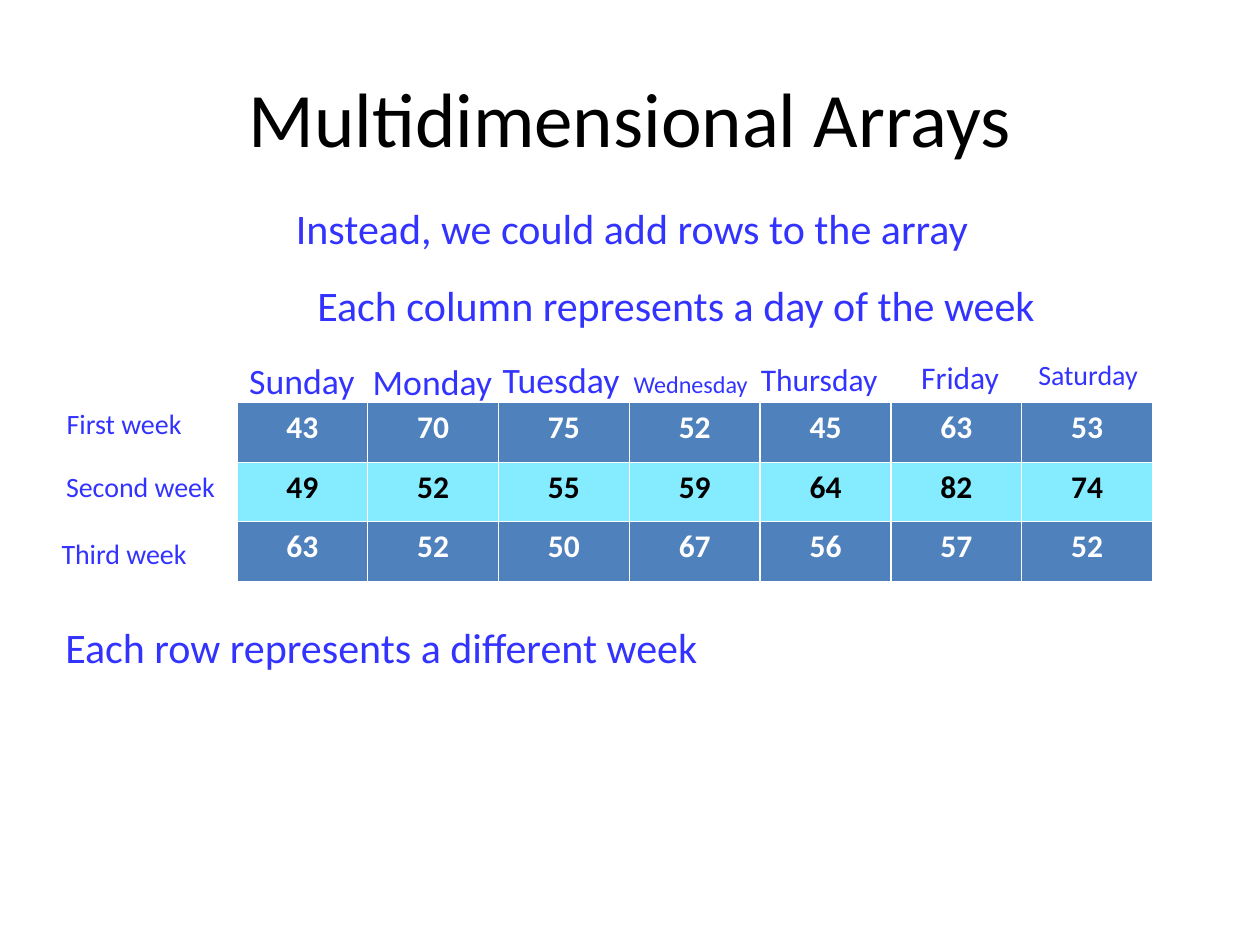
from dataclasses import dataclass

from pptx import Presentation
from pptx.dml.color import RGBColor
from pptx.enum.text import MSO_ANCHOR, PP_ALIGN
from pptx.slide import Slide
from pptx.text.text import TextFrame
from pptx.util import Inches, Pt

FONT = "Calibri"
BLACK = "000000"
WHITE = "FFFFFF"
LABEL_BLUE = "3333FF"
HEADER_BLUE = "4F81BD"
LIGHT_CYAN = "85EBFF"
TABLE_LEFT = 1.88
TABLE_WIDTH = 7.27
ROW_HEIGHT = 0.48


@dataclass
class Label:
    text: str
    left: float
    top: float
    width: float
    height: float = 0.41
    size: float = 16
    align: PP_ALIGN = PP_ALIGN.LEFT


@dataclass
class WeekRow:
    temperatures: list[int]
    fill: str
    color: str


FIRST_WEEK = WeekRow([43, 70, 75, 52, 45, 63, 53], HEADER_BLUE, WHITE)
SECOND_WEEK = WeekRow([49, 52, 55, 59, 64, 82, 74], LIGHT_CYAN, BLACK)
THIRD_WEEK = WeekRow([63, 52, 50, 67, 56, 57, 52], HEADER_BLUE, WHITE)

LABELS = [
    Label("Instead, we could add rows to the array", 2.25, 1.56, 6.4, 0.69, 24),
    Label("Each column represents a day of the week", 2.42, 2.17, 6.06, 0.56, 24),
    Label("Sunday", 1.88, 2.8, 1.1, size=20.4),
    Label("Monday", 2.86, 2.81, 1.17, size=20.4),
    Label("Tuesday", 3.89, 2.79, 1.17, size=20.4),
    Label("Wednesday", 4.93, 2.88, 1.17, size=13.8),
    Label("Thursday", 5.94, 2.81, 1.29, size=18),
    Label("Friday", 7.12, 2.79, 1, size=18, align=PP_ALIGN.CENTER),
    Label("Saturday", 8.11, 2.79, 1.05, align=PP_ALIGN.CENTER),
    Label("First week", 0.41, 3.18, 1.15, align=PP_ALIGN.CENTER),
    Label("Second week", 0.41, 3.68, 1.41, align=PP_ALIGN.CENTER),
    Label("Third week", 0.29, 4.21, 1.39, align=PP_ALIGN.CENTER),
    Label("Each row represents a different week", 0.42, 4.88, 6.06, 0.56, 24),
]


def rgb(value: str) -> RGBColor:
    return RGBColor.from_string(value)


def write_text(text_frame: TextFrame, text: str, size: float, color: str,
               align: PP_ALIGN, bold: bool = False) -> None:
    text_frame.text = text
    paragraph = text_frame.paragraphs[0]
    paragraph.alignment = align
    font = paragraph.runs[0].font
    font.name = FONT
    font.size = Pt(size)
    font.bold = bold
    font.color.rgb = rgb(color)


def add_title(slide: Slide, text: str) -> None:
    title = slide.shapes.title
    title.left, title.top = Inches(0.5), Inches(0.3)
    title.width, title.height = Inches(9), Inches(1.25)
    title.text_frame.vertical_anchor = MSO_ANCHOR.MIDDLE
    write_text(title.text_frame, text, 44, BLACK, PP_ALIGN.CENTER)


def add_label(slide: Slide, label: Label) -> None:
    shape = slide.shapes.add_textbox(Inches(label.left), Inches(label.top),
                                     Inches(label.width), Inches(label.height))
    shape.text_frame.word_wrap = True
    write_text(shape.text_frame, label.text, label.size, LABEL_BLUE, label.align)


def add_week_table(slide: Slide, top: float, weeks: list[WeekRow]) -> None:
    table = slide.shapes.add_table(
        len(weeks), len(weeks[0].temperatures), Inches(TABLE_LEFT), Inches(top),
        Inches(TABLE_WIDTH), Inches(ROW_HEIGHT * len(weeks))).table
    table.horz_banding = False
    for row, week in zip(table.rows, weeks):
        for cell, temperature in zip(row.cells, week.temperatures):
            cell.fill.solid()
            cell.fill.fore_color.rgb = rgb(week.fill)
            write_text(cell.text_frame, str(temperature), 18, week.color,
                       PP_ALIGN.CENTER, bold=True)


def main() -> None:
    presentation = Presentation()
    presentation.slide_width = Inches(10)
    presentation.slide_height = Inches(7.5)
    slide = presentation.slides.add_slide(presentation.slide_layouts[5])
    add_title(slide, "Multidimensional Arrays")
    add_week_table(slide, 3.19, [FIRST_WEEK, SECOND_WEEK])
    add_week_table(slide, 4.14, [THIRD_WEEK])
    for label in LABELS:
        add_label(slide, label)
    presentation.save("out.pptx")


if __name__ == "__main__":
    main()
